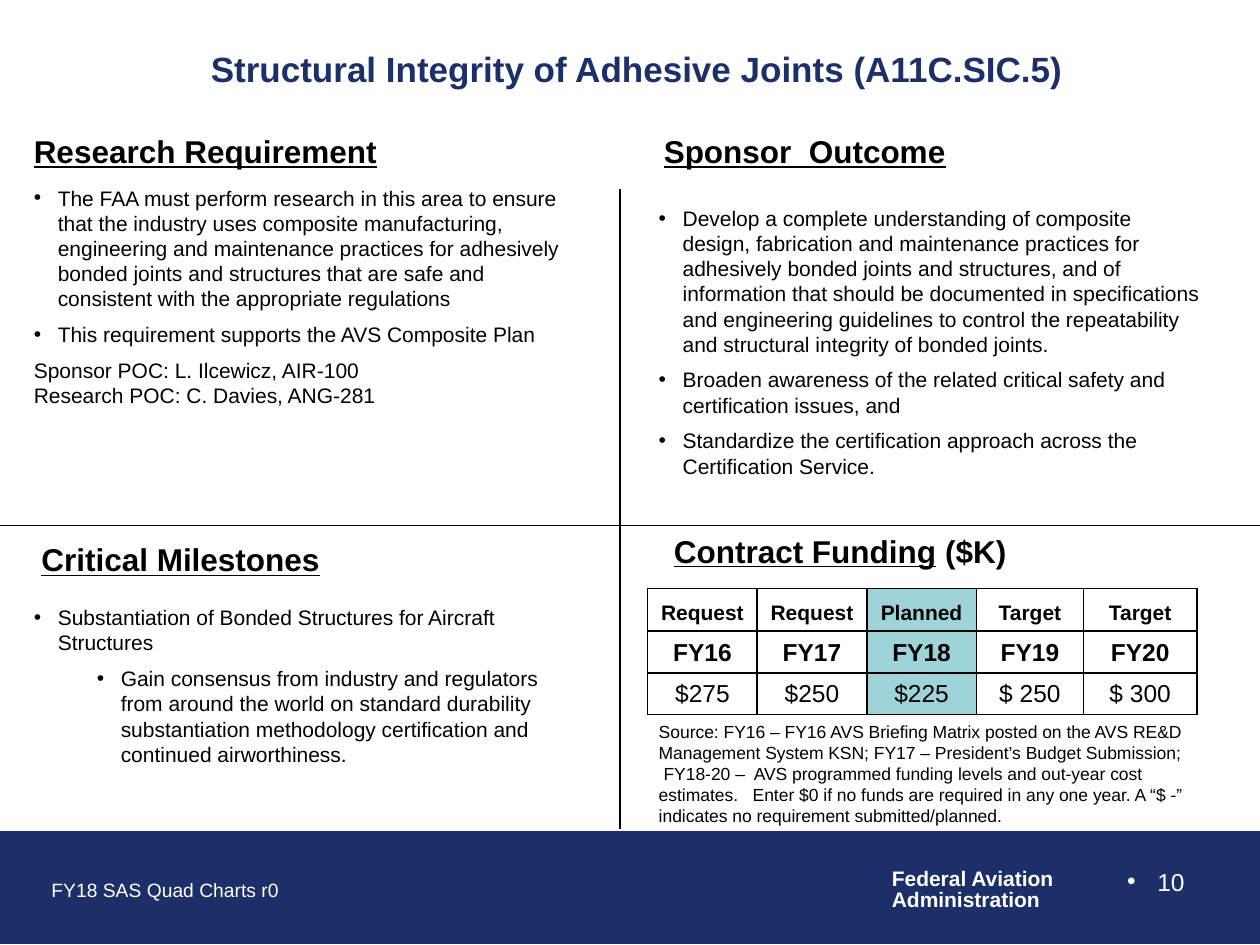
from dataclasses import dataclass, replace
from typing import Optional

from lxml import etree
from pptx import Presentation, util as u
from pptx.dml.color import RGBColor
from pptx.enum import shapes, text
from pptx.oxml import ns

Inches, Pt = u.Inches, u.Pt
NAVY = RGBColor(0x1D, 0x2F, 0x68)
TEAL = RGBColor(0x9E, 0xD3, 0xD7)
BLACK = RGBColor(0, 0, 0)
WHITE = RGBColor(0xFF, 0xFF, 0xFF)
FONT = "Arial"
LEFT, CENTER, RIGHT = text.PP_ALIGN.LEFT, text.PP_ALIGN.CENTER, text.PP_ALIGN.RIGHT
TOP, MIDDLE, BOTTOM = (text.MSO_ANCHOR.TOP, text.MSO_ANCHOR.MIDDLE,
                       text.MSO_ANCHOR.BOTTOM)


@dataclass(frozen=True)
class Style:
    size: float
    color: RGBColor = BLACK
    bold: bool = False
    underline: bool = False


@dataclass(frozen=True)
class Item:
    """One paragraph: runs of (words, style), with an optional bullet."""
    runs: tuple
    bullet_indent: Optional[float] = None
    hanging: float = 0.19
    level: int = 0
    before: float = 0
    align: int = LEFT
    line_spacing: Optional[float] = None


@dataclass(frozen=True)
class Box:
    left: float
    top: float
    width: float
    height: float
    items: tuple
    anchor: int = TOP
    wrap: bool = True


TITLE = Style(20, NAVY, bold=True)
HEADING = Style(18, bold=True, underline=True)
BODY = Style(12)
AGENCY = Style(12, WHITE, bold=True)


def plain(words: str, style: Style = BODY, **options) -> Item:
    return Item(((words, style),), **options)


def bullet(words: str, indent: float = 0.19, **options) -> Item:
    return plain(words, bullet_indent=indent, **options)


def write_item(paragraph, item: Item) -> None:
    if item.bullet_indent is not None:
        properties = paragraph._p.get_or_add_pPr()
        properties.set("marL", str(Inches(item.bullet_indent)))
        properties.set("indent", str(-Inches(item.hanging)))
        etree.SubElement(properties, ns.qn("a:buFont"), typeface=FONT)
        etree.SubElement(properties, ns.qn("a:buChar"), char="•")
    paragraph.level = item.level
    paragraph.alignment = item.align
    paragraph.space_before = Pt(item.before)
    if item.line_spacing:
        paragraph.line_spacing = item.line_spacing
    for words, style in item.runs:
        run = paragraph.add_run()
        run.text = words
        run.font.name = FONT
        run.font.size = Pt(style.size)
        run.font.bold = style.bold
        run.font.underline = style.underline
        run.font.color.rgb = style.color


def draw_box(slide, box: Box) -> None:
    shape = slide.shapes.add_textbox(Inches(box.left), Inches(box.top),
                                     Inches(box.width), Inches(box.height))
    frame = shape.text_frame
    frame.word_wrap = box.wrap
    frame.vertical_anchor = box.anchor
    for index, item in enumerate(box.items):
        paragraph = frame.add_paragraph() if index else frame.paragraphs[0]
        write_item(paragraph, item)


def draw_line(slide, x1: float, y1: float, x2: float, y2: float) -> None:
    line = slide.shapes.add_connector(shapes.MSO_CONNECTOR.STRAIGHT, Inches(x1),
                                      Inches(y1), Inches(x2), Inches(y2))
    line.line.color.rgb = BLACK
    line.line.width = Pt(0.75)
    etree.SubElement(line._element.spPr, ns.qn("a:effectLst"))


def draw_footer_band(slide) -> None:
    band = slide.shapes.add_shape(shapes.MSO_SHAPE.RECTANGLE, 0, Inches(6.6),
                                  Inches(10), Inches(0.89))
    band.shadow.inherit = False
    band.fill.solid()
    band.fill.fore_color.rgb = NAVY
    band.line.color.rgb = NAVY
    band.line.width = Pt(0.75)


def add_borders(cell) -> None:
    properties = cell._tc.get_or_add_tcPr()
    for side in ("lnL", "lnR", "lnT", "lnB"):
        border = etree.SubElement(properties, ns.qn(f"a:{side}"), w=str(Pt(1)))
        fill = etree.SubElement(border, ns.qn("a:solidFill"))
        etree.SubElement(fill, ns.qn("a:srgbClr"), val=str(BLACK))


def draw_funding_table(slide) -> None:
    widths = (0.87, 0.87, 0.87, 0.85, 0.9)
    rows = (
        (0.34, Style(12, bold=True),
         ("Request", "Request", "Planned", "Target", "Target")),
        (0.33, Style(14, bold=True), ("FY16", "FY17", "FY18", "FY19", "FY20")),
        (0.33, Style(14), ("$275", "$250", "$225", "$ 250", "$ 300")),
    )
    planned_column = 2
    table = slide.shapes.add_table(len(rows), len(widths), Inches(5.14), Inches(4.67),
                                   Inches(sum(widths)), Inches(1)).table
    table.first_row = table.horz_banding = False
    for column, width in zip(table.columns, widths):
        column.width = Inches(width)
    for row_index, (height, style, values) in enumerate(rows):
        table.rows[row_index].height = Inches(height)
        for column_index, value in enumerate(values):
            cell = table.cell(row_index, column_index)
            add_borders(cell)
            cell.fill.solid()
            cell.fill.fore_color.rgb = TEAL if column_index == planned_column else WHITE
            cell.vertical_anchor = BOTTOM
            write_item(cell.text_frame.paragraphs[0], plain(value, style, align=CENTER))


BOXES = (
    # Title and quadrant headings
    Box(0.42, 0.13, 9.27, 0.83, (plain(
        "Structural Integrity of Adhesive Joints (A11C.SIC.5)", TITLE, align=CENTER),),
        anchor=MIDDLE),
    Box(0.17, 1, 5, 0.33, (plain("Research Requirement", HEADING),)),
    Box(5.17, 1, 4.67, 0.33, (plain("Sponsor  Outcome", HEADING),)),
    Box(0.23, 4.24, 4.5, 0.38, (plain("Critical Milestones", HEADING),)),
    Box(5.25, 4.17, 4.42, 0.54, (Item((
        ("Contract Funding", HEADING), (" ($K)", replace(HEADING, underline=False)))),)),
    # Research requirement
    Box(0.17, 1.42, 4.42, 2.2, (
        bullet("The FAA must perform research in this area to ensure that the industry "
               "uses composite manufacturing, engineering and maintenance practices for "
               "adhesively bonded joints and structures that are safe and consistent "
               "with the appropriate regulations"),
        bullet("This requirement supports the AVS Composite Plan", before=6),
        plain("Sponsor POC: L. Ilcewicz, AIR-100", before=6),
        plain("Research POC: C. Davies, ANG-281"))),
    # Sponsor outcome
    Box(5.13, 1.58, 4.53, 2.32, (
        bullet("Develop a complete understanding of composite design, fabrication and "
               "maintenance practices for adhesively bonded joints and structures, and "
               "of information that should be documented in specifications and "
               "engineering guidelines to control the repeatability and structural "
               "integrity of bonded joints."),
        bullet("Broaden awareness of the related critical safety and certification "
               "issues, and", before=6),
        bullet("Standardize the certification approach across the Certification "
               "Service.", before=6))),
    # Critical milestones
    Box(0.17, 4.75, 4.55, 1.41, (
        bullet("Substantiation of Bonded Structures for Aircraft Structures"),
        bullet("Gain consensus from industry and regulators from around the world on "
               "standard durability substantiation methodology certification and "
               "continued airworthiness.", indent=0.69, level=1, before=6))),
    # Funding source
    Box(5.13, 5.67, 4.37, 1.19, (plain(
        "Source: FY16 – FY16 AVS Briefing Matrix posted on the AVS RE&D Management "
        "System KSN; FY17 – President’s Budget Submission;  FY18-20 –  AVS programmed "
        "funding levels and out-year cost estimates.   Enter $0 if no funds are required "
        "in any one year. A “$ -” indicates no requirement submitted/planned.",
        Style(10)),)),
    # Footer
    Box(0.31, 6.92, 2.02, 0.29, (plain("FY18 SAS Quad Charts r0", Style(11, WHITE)),),
        wrap=False),
    Box(6.98, 6.85, 1.5, 0.44, tuple(
        plain(words, AGENCY, line_spacing=0.85)
        for words in ("Federal Aviation", "Administration")), wrap=False),
    Box(7.17, 6.83, 2.33, 0.52, (plain(
        "10", Style(14, WHITE), bullet_indent=0.24, hanging=0.24, align=RIGHT),)),
)


def main() -> None:
    presentation = Presentation()
    presentation.slide_width, presentation.slide_height = Inches(10), Inches(7.5)
    slide = presentation.slides.add_slide(presentation.slide_layouts[6])
    draw_footer_band(slide)
    draw_line(slide, 4.92, 1.5, 4.92, 6.58)
    draw_line(slide, 0, 4.17, 10, 4.17)
    draw_funding_table(slide)
    for box in BOXES:
        draw_box(slide, box)
    presentation.save("out.pptx")


if __name__ == "__main__":
    main()
